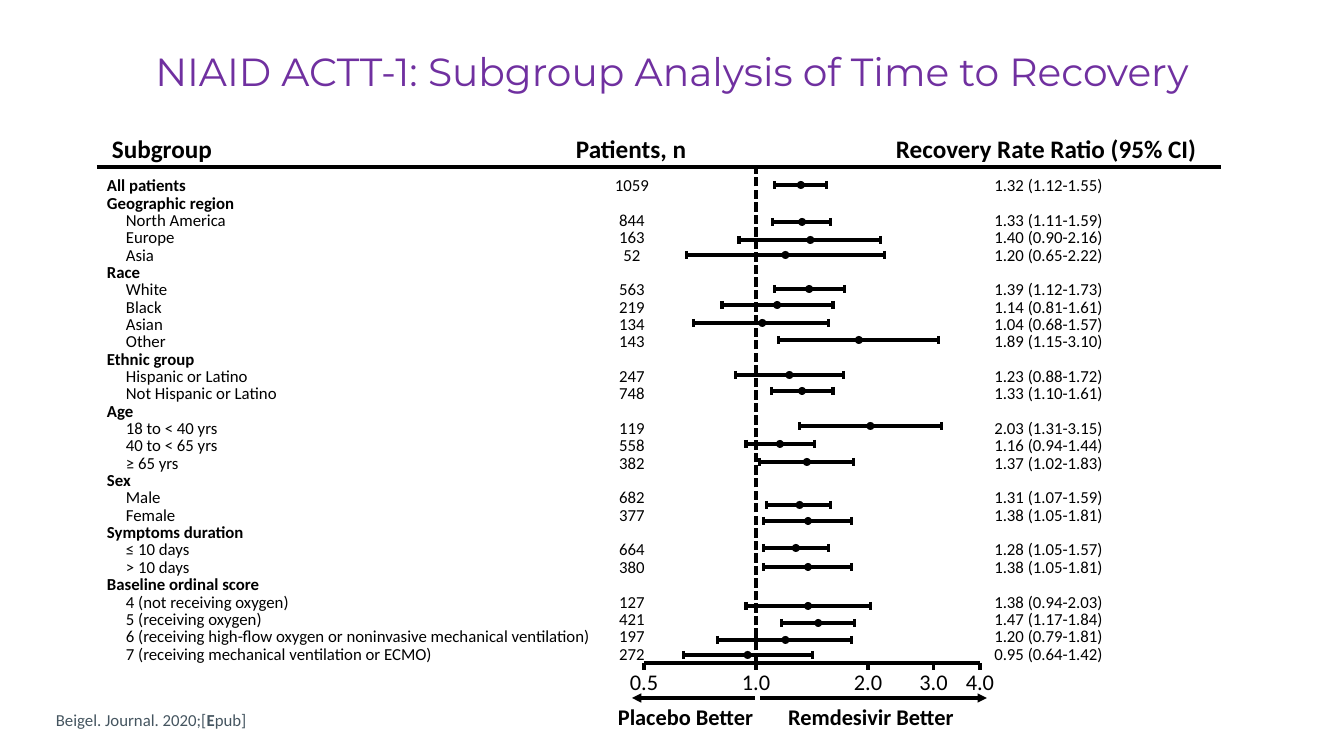
from math import log2

from lxml import etree
from pptx import Presentation
from pptx import util as u
from pptx.dml.color import RGBColor
from pptx.enum import dml, shapes, text
from pptx.oxml.ns import qn

TITLE = "NIAID ACTT-1: Subgroup Analysis of Time to Recovery"
CITATION = [("Beigel. Journal. 2020;[", False), ("E", True), ("pub]", False)]

# text, left, top, width, height, size, alignment
HEADINGS = [
    ("Subgroup", 102, 128, 121, 40, 18, "LEFT"),
    ("Patients, n", 566, 128, 132, 40, 18, "LEFT"),
    ("Recovery Rate Ratio (95% CI)", 886, 128, 324, 40, 18, "LEFT"),
    ("Placebo Better", 608, 698, 157, 37, 16, "LEFT"),
    ("Remdesivir Better", 755, 698, 232, 37, 16, "CENTER"),
]

# Group name alone, or: label, patients, ratio, low, high, height of its bar on the page
ROWS = [
    ("All patients", 1059, 1.32, 1.12, 1.55, 185),
    ("Geographic region",),
    ("North America", 844, 1.33, 1.11, 1.59, 222),
    ("Europe", 163, 1.40, 0.90, 2.16, 240),
    ("Asia", 52, 1.20, 0.65, 2.22, 255),
    ("Race",),
    ("White", 563, 1.39, 1.12, 1.73, 289),
    ("Black", 219, 1.14, 0.81, 1.61, 305),
    ("Asian", 134, 1.04, 0.68, 1.57, 323),
    ("Other", 143, 1.89, 1.15, 3.10, 340),
    ("Ethnic group",),
    ("Hispanic or Latino", 247, 1.23, 0.88, 1.72, 375),
    ("Not Hispanic or Latino", 748, 1.33, 1.10, 1.61, 391),
    ("Age",),
    ("18 to < 40 yrs", 119, 2.03, 1.31, 3.15, 426),
    ("40 to < 65 yrs", 558, 1.16, 0.94, 1.44, 444),
    ("≥ 65 yrs", 382, 1.37, 1.02, 1.83, 462),
    ("Sex",),
    ("Male", 682, 1.31, 1.07, 1.59, 505),
    ("Female", 377, 1.38, 1.05, 1.81, 521),
    ("Symptoms duration",),
    ("≤ 10 days", 664, 1.28, 1.05, 1.57, 548),
    ("> 10 days", 380, 1.38, 1.05, 1.81, 567),
    ("Baseline ordinal score",),
    ("4 (not receiving oxygen)", 127, 1.38, 0.94, 2.03, 606),
    ("5 (receiving oxygen)", 421, 1.47, 1.17, 1.84, 623),
    ("6 (receiving high-flow oxygen or noninvasive mechanical ventilation)",
     197, 1.20, 0.79, 1.81, 640),
    ("7 (receiving mechanical ventilation or ECMO)", 272, 0.95, 0.64, 1.42, 655),
]
TICKS = [0.5, 1.0, 2.0, 3.0, 4.0]

PX = 914400 / 100.8
UNITY_X, DOUBLING = 756, 112  # log axis: place of 1.0 and px per doubling
AXIS_Y, RULE_Y, ARROW_Y = 663, 167, 698
ROW_PITCH = 12.4  # points
BLACK, PURPLE, SLATE = "000000", "7030A0", "455560"


def px(length):
    return u.Emu(round(length * PX))


def color(value):
    return RGBColor.from_string(value)


def ratio_x(ratio):
    return UNITY_X + DOUBLING * log2(ratio)


def line_of(words, bold=False, indent=0, before=0):
    return {"spans": [(words, bold)], "indent": indent, "before": before}


def write(box, lines, size=12, font="Calibri", fill=BLACK, align="LEFT",
          anchor="TOP", wrap=True, spacing=1.0):
    frame = box.text_frame
    frame.auto_size = text.MSO_AUTO_SIZE.NONE
    frame.word_wrap = wrap
    frame.vertical_anchor = text.MSO_ANCHOR[anchor]
    for index, line in enumerate(lines):
        para = frame.add_paragraph() if index else frame.paragraphs[0]
        para.alignment = text.PP_ALIGN[align]
        para.line_spacing = spacing
        para.space_before = u.Pt(line["before"])
        if line["indent"]:
            para._p.get_or_add_pPr().set("marL", str(px(line["indent"])))
        for words, bold in line["spans"]:
            span = para.add_run()
            span.text = words
            span.font.name, span.font.size, span.font.bold = font, u.Pt(size), bold
            span.font.color.rgb = color(fill)


def add_box(page, left, top, width, height):
    return page.shapes.add_textbox(px(left), px(top), px(width), px(height))


def add_line(parent, x1, y1, x2, y2, dashed=False, arrow=False):
    line = parent.shapes.add_connector(
        shapes.MSO_CONNECTOR.STRAIGHT, px(x1), px(y1), px(x2), px(y2))
    line.line.color.rgb = color(BLACK)
    line.line.width = u.Pt(2.25)
    if dashed:
        line.line.dash_style = dml.MSO_LINE.SQUARE_DOT
    if arrow:
        etree.SubElement(line.line._get_or_add_ln(), qn("a:tailEnd"), type="triangle")
    etree.SubElement(line._element.spPr, qn("a:effectLst"))


def add_interval(page, ratio, low, high, y, cap=4, dot=8):
    group = page.shapes.add_group_shape()
    add_line(group, ratio_x(low), y, ratio_x(high), y)
    for end in (low, high):
        add_line(group, ratio_x(end), y - cap, ratio_x(end), y + cap)
    point = group.shapes.add_shape(
        shapes.MSO_SHAPE.OVAL, px(ratio_x(ratio) - dot / 2), px(y - dot / 2), px(dot), px(dot))
    point.fill.solid()
    point.fill.fore_color.rgb = color(BLACK)
    point.line.fill.background()
    point.shadow.inherit = False


def main():
    deck = Presentation()
    deck.slide_width, deck.slide_height = px(1344), px(756)
    page = deck.slides.add_slide(deck.slide_layouts[5])

    # Title, citation and headings
    title = page.shapes.title
    title.left, title.top, title.width, title.height = px(110), px(42), px(1124), px(105)
    write(title, [line_of(TITLE)], size=28, font="Montserrat", fill=PURPLE, align="CENTER")
    write(add_box(page, 46, 705, 883, 30), [{"spans": CITATION, "indent": 0, "before": 0}],
          fill=SLATE, anchor="BOTTOM")
    for words, left, top, width, height, size, align in HEADINGS:
        write(add_box(page, left, top, width, height), [line_of(words, bold=True)],
              size=size, align=align, wrap=False)

    # Text columns: number columns skip the lines of the group names
    labels, patients, ratios = [], [], []
    before = 0
    for index, (label, *values) in enumerate(ROWS):
        bold = index == 0 or not values
        labels.append(line_of(label, bold, indent=0 if bold else 19))
        if values:
            count, ratio, low, high, _ = values
            patients.append(line_of(str(count), before=before))
            ratios.append(line_of(f"{ratio:.2f} ({low:.2f}-{high:.2f})", before=before))
        before = 0 if values else ROW_PITCH
    write(add_box(page, 97, 173, 513, 506), labels, spacing=0.86)
    write(add_box(page, 586, 173, 92, 501), patients, align="CENTER", spacing=0.86)
    write(add_box(page, 952, 173, 193, 501), ratios, align="CENTER", spacing=0.86)

    # Axis, header rule and direction arrows
    add_line(page, 97, RULE_Y, 1221, RULE_Y)
    add_line(page, UNITY_X, AXIS_Y, UNITY_X, RULE_Y, dashed=True)
    add_line(page, ratio_x(TICKS[0]), AXIS_Y, ratio_x(TICKS[-1]), AXIS_Y)
    for tick in TICKS:
        x = ratio_x(tick)
        add_line(page, x, AXIS_Y, x, AXIS_Y + 7)
        write(add_box(page, x - 26, AXIS_Y, 52, 37), [line_of(f"{tick:.1f}")],
              size=16, align="CENTER", wrap=False)
    add_line(page, 755, ARROW_Y, 632, ARROW_Y, arrow=True)
    add_line(page, 760, ARROW_Y, 987, ARROW_Y, arrow=True)

    # Ratio and confidence interval of each subgroup
    for _, *values in ROWS:
        if values:
            add_interval(page, *values[1:])

    deck.save("out.pptx")


if __name__ == "__main__":
    main()
